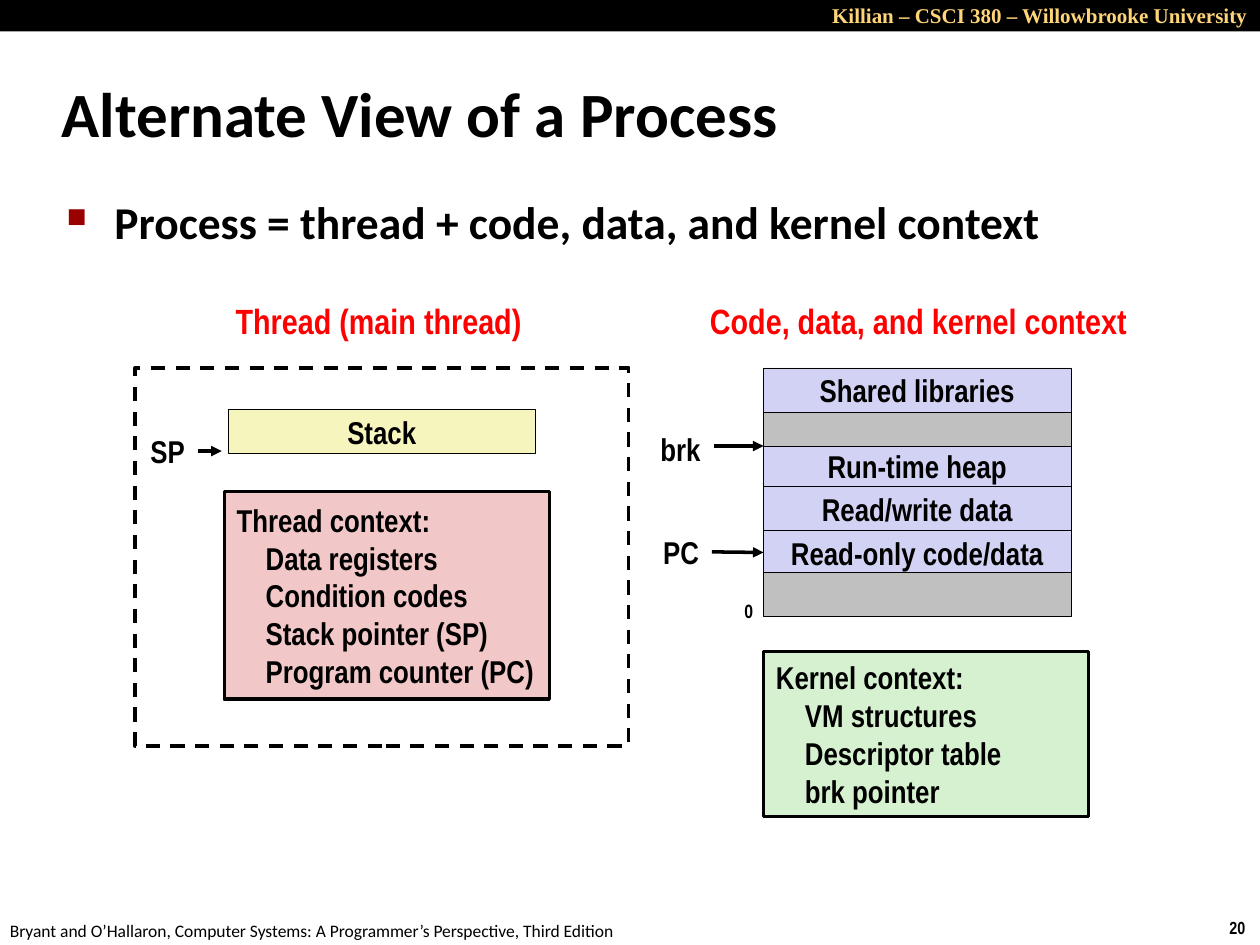
from lxml import etree
from pptx import Presentation
from pptx.dml.color import RGBColor
from pptx.enum.dml import MSO_LINE_DASH_STYLE as Dash
from pptx.enum.shapes import MSO_CONNECTOR as Connector, MSO_SHAPE as Shape
from pptx.enum.text import MSO_ANCHOR as Anchor, PP_ALIGN as Align
from pptx.oxml.ns import qn
from pptx.util import Inches, Pt

COLORS = {
    "black": "000000", "gold": "FFD579", "red": "FF0000", "bullet": "990000",
    "lilac": "D2D2F4", "gray": "C0C0C0", "yellow": "F6F5BD",
    "pink": "F1C7C7", "green": "D5F1CF",
}
NARROW = "Arial Narrow"

TITLE = "Alternate View of a Process"
CLAIM = "Process = thread + code, data, and kernel context"
COURSE = "Killian – CSCI 380 – Willowbrooke University"
BOOK = "Bryant and O’Hallaron, Computer Systems: A Programmer’s Perspective, Third Edition"
PAGE = "20"

HEADINGS = [
    ("Thread (main thread)", (1.76, 2.32, 2.49, 0.44)),
    ("Code, data, and kernel context", (5.49, 2.32, 3.6, 0.44)),
]
# text, top, height, fill
MEMORY = [
    ("Shared libraries", 2.92, 0.35, "lilac"),
    ("", 3.27, 0.28, "gray"),
    ("Run-time heap", 3.54, 0.32, "lilac"),
    ("Read/write data", 3.86, 0.35, "lilac"),
    ("Read-only code/data", 4.21, 0.35, "lilac"),
    ("", 4.54, 0.35, "gray"),
]
MEMORY_LEFT, SEGMENT_WIDTH = 6.06, 2.44
CONTEXTS = [
    (["Thread context:", "Data registers", "Condition codes",
      "Stack pointer (SP)", "Program counter (PC)"], (1.78, 3.9, 2.58, 1.65), "pink"),
    (["Kernel context:", "VM structures", "Descriptor table", "brk pointer"],
     (MEMORY_LEFT, 5.17, 2.58, 1.31), "green"),
]
# label, label box, arrow start, arrow end
POINTERS = [
    ("SP", (1.09, 3.38, 0.48, 0.4), (1.57, 3.58), (1.76, 3.58)),
    ("PC", (5.16, 4.18, 0.49, 0.4), (5.65, 4.38), (MEMORY_LEFT, 4.38)),
    ("brk", (5.14, 3.36, 0.52, 0.4), (5.67, 3.54), (MEMORY_LEFT, 3.54)),
]


def rgb(color):
    return RGBColor.from_string(COLORS[color])


def write(shape, lines, size=18, font=NARROW, color="black", bold=True,
          align=Align.CENTER, anchor=Anchor.MIDDLE, wrap=False, indent=0):
    """Fill a shape with one paragraph per line; indent applies after the first."""
    frame = shape.text_frame
    frame.word_wrap = wrap
    frame.vertical_anchor = anchor
    frame.text = "\n".join(lines)
    looks = {"name": font, "size": Pt(size), "bold": bold}
    for number, paragraph in enumerate(frame.paragraphs):
        paragraph.alignment = align
        if number and indent:
            paragraph._p.get_or_add_pPr().set("marL", str(Inches(indent)))
        run_font = paragraph.runs[0].font
        for key, value in looks.items():
            setattr(run_font, key, value)
        run_font.color.rgb = rgb(color)


def add_text(slide, box, text, **looks):
    label = slide.shapes.add_textbox(*map(Inches, box))
    write(label, [text], **looks)
    return label


def add_rect(slide, box, fill=None, line_width=0.25):
    rect = slide.shapes.add_shape(Shape.RECTANGLE, *map(Inches, box))
    rect.shadow.inherit = False
    if fill:
        rect.fill.solid()
        rect.fill.fore_color.rgb = rgb(fill)
    else:
        rect.fill.background()
    if line_width:
        rect.line.color.rgb = rgb("black")
        rect.line.width = Pt(line_width)
    else:
        rect.line.fill.background()
    return rect


def add_segment(slide, text, left, top, height, fill):
    segment = add_rect(slide, (left, top, SEGMENT_WIDTH, height), fill)
    if text:
        write(segment, [text])
    return segment


def add_arrow(slide, start, end):
    arrow = slide.shapes.add_connector(Connector.STRAIGHT, *map(Inches, start + end))
    arrow.line.color.rgb = rgb("black")
    arrow.line.width = Pt(2)
    etree.SubElement(arrow.line._get_or_add_ln(), qn("a:tailEnd"), type="triangle")
    etree.SubElement(arrow._element.spPr, qn("a:effectLst"))
    return arrow


def add_bullet(paragraph):
    paragraph.space_before = Pt(5)
    props = paragraph._p.get_or_add_pPr()
    props.set("marL", str(Inches(0.38)))
    props.set("indent", str(-Inches(0.38)))
    color = etree.SubElement(props, qn("a:buClr"))
    etree.SubElement(color, qn("a:srgbClr"), val=COLORS["bullet"])
    etree.SubElement(props, qn("a:buSzPct"), val="60000")
    etree.SubElement(props, qn("a:buChar"), char="■")


def add_frame(slide):
    """Add the course banner, book credit and page number."""
    add_rect(slide, (0, 0, 10, 0.25), "black", line_width=0)
    add_text(slide, (4.5, -0.03, 5.5, 0.3), COURSE, size=12, font="Times New Roman",
             color="gold", align=Align.RIGHT, anchor=Anchor.TOP, wrap=True)
    add_text(slide, (-0.02, 7.25, 5.08, 0.27), BOOK, size=10, font="Calibri",
             bold=False, align=Align.LEFT, anchor=Anchor.TOP)
    add_text(slide, (9.66, 7.23, 0.34, 0.27), PAGE, size=10,
             align=Align.LEFT, anchor=Anchor.TOP)


def main():
    deck = Presentation()
    deck.slide_width, deck.slide_height = Inches(10), Inches(7.5)
    slide = deck.slides.add_slide(deck.slide_layouts[5])
    add_frame(slide)

    title = slide.shapes.title
    title.left, title.top, title.width, title.height = map(Inches, (0.39, 0.48, 8.3, 0.83))
    write(title, [TITLE], size=36, font="Calibri", align=Align.LEFT, wrap=True)
    claim = add_text(slide, (0.43, 1.49, 8.64, 0.6), CLAIM, size=26, font="Calibri",
                     align=Align.LEFT, anchor=Anchor.TOP, wrap=True)
    add_bullet(claim.text_frame.paragraphs[0])

    for text, box in HEADINGS:
        add_text(slide, box, text, size=20, color="red")

    thread = add_rect(slide, (1.07, 2.92, 3.92, 3), line_width=2)
    thread.line.dash_style = Dash.DASH
    add_segment(slide, "Stack", 1.81, 3.25, 0.35, "yellow")
    segments = {}
    for text, top, height, fill in MEMORY:
        segments[text] = add_segment(slide, text, MEMORY_LEFT, top, height, fill)
    add_text(slide, (5.81, 4.71, 0.27, 0.29), "0", size=11,
             align=Align.LEFT, anchor=Anchor.TOP)

    for lines, box, fill in CONTEXTS:
        context = add_rect(slide, box, fill, line_width=2)
        write(context, lines, align=Align.LEFT, indent=0.23)

    for text, box, start, end in POINTERS:
        label = add_text(slide, box, text)
        arrow = add_arrow(slide, start, end)
        if text != "brk":  # brk points at the boundary above the heap
            arrow.begin_connect(label, 3)
        if text == "PC":
            arrow.end_connect(segments["Read-only code/data"], 1)

    deck.save("out.pptx")


if __name__ == "__main__":
    main()
